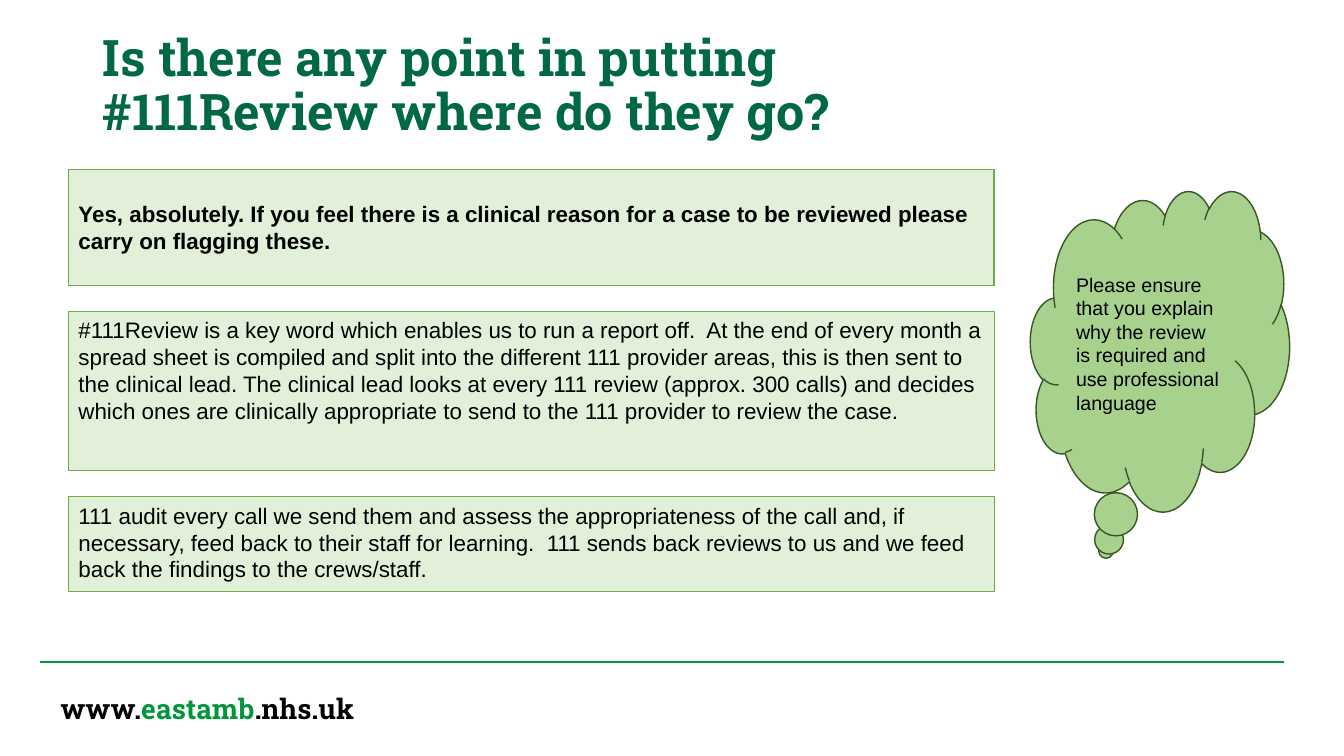
from lxml import etree
from pptx import Presentation
from pptx.dml.color import RGBColor
from pptx.enum.shapes import MSO_CONNECTOR, MSO_SHAPE
from pptx.enum.text import MSO_ANCHOR, MSO_AUTO_SIZE, PP_ALIGN
from pptx.oxml.ns import qn
from pptx.util import Inches, Pt

RECT, CLOUD = MSO_SHAPE.RECTANGLE, MSO_SHAPE.CLOUD_CALLOUT
STRAIGHT = MSO_CONNECTOR.STRAIGHT
TOP, MIDDLE = MSO_ANCHOR.TOP, MSO_ANCHOR.MIDDLE
LEFT, FIXED = PP_ALIGN.LEFT, MSO_AUTO_SIZE.NONE

BLACK, GREEN, DARK = "000000", "009639", "006747"
PALE, EDGE, LEAF, MOSS = "E2F0D9", "70AD47", "A9D18E", "385723"


def paint(target, color):
    """Set a colour format from a hex string."""
    target.rgb = RGBColor.from_string(color)


class Page:
    """Holds the text styles and the current slide."""

    styles = {
        "title": {"name": "Roboto Slab", "size": Pt(36), "bold": True},
        "web": {"name": "Roboto Slab", "size": Pt(20), "bold": True},
        "lead": {"name": "Arial", "size": Pt(16), "bold": True},
        "body": {"name": "Arial", "size": Pt(16), "bold": False},
        "note": {"name": "Arial", "size": Pt(14), "bold": False},
    }

    def __init__(self, deck):
        """Add a title-only slide."""
        self.slide = deck.slides.add_slide(deck.slide_layouts[5])
        self.shapes = self.slide.shapes

    def letter(self, shape, parts, style, anchor):
        """Fill a shape with one paragraph of coloured runs."""
        frame = shape.text_frame
        settings = {"word_wrap": True, "auto_size": FIXED,
                    "vertical_anchor": anchor}
        for key, value in settings.items():
            setattr(frame, key, value)
        para = frame.paragraphs[0]
        para.alignment = LEFT
        for text, color in parts:
            run = para.add_run()
            run.text = text
            for key, value in self.styles[style].items():
                setattr(run.font, key, value)
            paint(run.font.color, color)
        return para

    def title(self, box, text):
        """Place and format the title placeholder."""
        shape = self.shapes.title
        for key, value in zip(("left", "top", "width", "height"), box):
            setattr(shape, key, Inches(value))
        para = self.letter(shape, [(text, DARK)], "title", MIDDLE)
        para.line_spacing = 0.9

    def label(self, box, parts, style):
        """Add a plain text box."""
        shape = self.shapes.add_textbox(*map(Inches, box))
        self.letter(shape, parts, style, TOP)

    def panel(self, kind, box, text, style, anchor, fill, edge, width):
        """Add a filled and outlined shape with text."""
        shape = self.shapes.add_shape(kind, *map(Inches, box))
        shape.shadow.inherit = False
        shape.fill.solid()
        paint(shape.fill.fore_color, fill)
        paint(shape.line.color, edge)
        shape.line.width = Pt(width)
        self.letter(shape, [(text, BLACK)], style, anchor)

    def rule(self, ends, color, width):
        """Add a straight line."""
        line = self.shapes.add_connector(STRAIGHT, *map(Inches, ends))
        paint(line.line.color, color)
        line.line.width = Pt(width)
        etree.SubElement(line._element.spPr, qn("a:effectLst"))


def main():
    """Build and save the slide."""
    deck = Presentation()
    deck.slide_width, deck.slide_height = Inches(13.33), Inches(7.5)
    page = Page(deck)
    page.rule((0.4, 6.57, 12.73, 6.57), GREEN, 1.5)
    page.label((0.5, 6.81, 3.42, 0.4),
               [("www.", BLACK), ("eastamb", GREEN), (".nhs.uk", BLACK)],
               "web")
    page.title((0.92, 0.29, 8.77, 1.15),
               "Is there any point in putting #111Review where do they go?")

    panels = [
        (1.15, "lead", MIDDLE, 1,
         "Yes, absolutely. If you feel there is a clinical reason for a case "
         "to be reviewed please carry on flagging these."),
        (1.58, "body", TOP, 0.75,
         "#111Review is a key word which enables us to run a report off.  At "
         "the end of every month a spread sheet is compiled and split into "
         "the different 111 provider areas, this is then sent to the clinical "
         "lead. The clinical lead looks at every 111 review (approx. 300 "
         "calls) and decides which ones are clinically appropriate to send to "
         "the 111 provider to review the case."),
        (0.94, "body", TOP, 0.75,
         "111 audit every call we send them and assess the appropriateness of "
         "the call and, if necessary, feed back to their staff for learning.  "
         "111 sends back reviews to us and we feed back the findings to the "
         "crews/staff."),
    ]
    top, gap = 1.68, 0.26
    for height, style, anchor, width, text in panels:
        page.panel(RECT, (0.68, top, 9.18, height), text, style, anchor,
                   PALE, EDGE, width)
        top += height + gap

    page.panel(CLOUD, (10.22, 1.89, 2.57, 3.18),
               "Please ensure that you explain why the review is required and "
               "use professional language", "note", MIDDLE, LEAF, MOSS, 1)
    deck.save("out.pptx")


if __name__ == "__main__":
    main()
